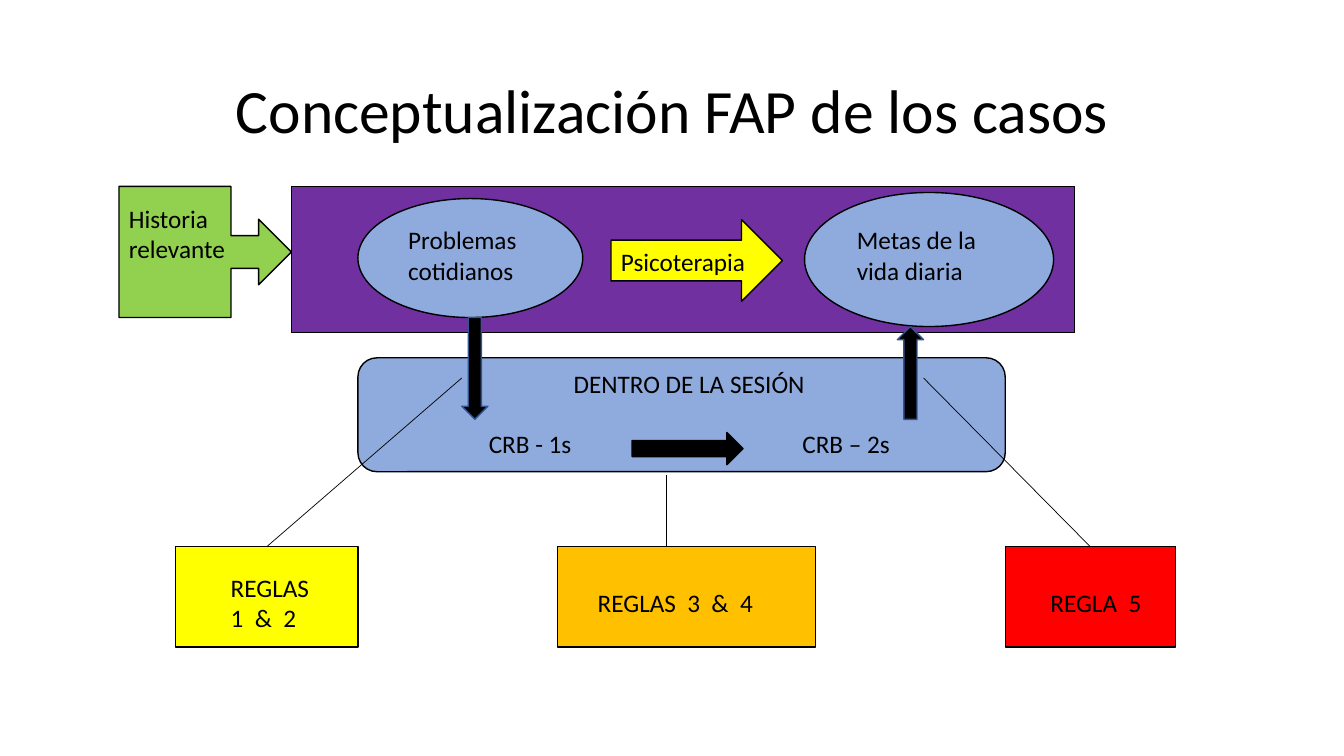
from dataclasses import dataclass
from pptx import Presentation
from pptx import util as u
from pptx.dml.color import RGBColor
from pptx.enum import shapes, text
from pptx.oxml.ns import qn
from lxml import etree

KIND = shapes.MSO_SHAPE
ALIGN = text.PP_ALIGN


@dataclass(frozen=True)
class Theme:
    font: str = "Calibri"
    head: int = 44
    body: int = 18
    edge: float = 1
    hair: float = 0.5
    black: str = "000000"
    navy: str = "325491"
    blue: str = "8FAADC"
    purple: str = "7030A0"
    green: str = "92D050"
    yellow: str = "FFFF00"
    orange: str = "FFC000"
    red: str = "FF0000"


THEME = Theme()


def color(code):
    return RGBColor.from_string(code)


def place(box, x, y, w, h):
    return [u.Inches(v) for v in (box[0] + x, box[1] + y, w, h)]


def style(frame, size, align):
    for para in frame.paragraphs:
        para.alignment = align
        for run in para.runs:
            run.font.name = THEME.font
            run.font.size = u.Pt(size)
            run.font.color.rgb = color(THEME.black)


def draw(slide, kind, box, spot, fill, line=THEME.black):
    shape = slide.shapes.add_shape(kind, *place(box, *spot))
    shape.shadow.inherit = False
    shape.fill.solid()
    shape.fill.fore_color.rgb = color(fill)
    shape.line.color.rgb = color(line)
    shape.line.width = u.Pt(THEME.edge)
    return shape


def label(slide, words, box, spot, align=ALIGN.LEFT):
    frame = slide.shapes.add_textbox(*place(box, *spot)).text_frame
    frame.word_wrap = True
    frame.text = words
    style(frame, THEME.body, align)


def link(slide, start, end):
    line = slide.shapes.add_connector(
        shapes.MSO_CONNECTOR.STRAIGHT, *[u.Inches(v) for v in start + end])
    line.line.color.rgb = color(THEME.black)
    line.line.width = u.Pt(THEME.hair)
    etree.SubElement(line._element.spPr, qn("a:effectLst"))


def title(slide, box):
    head = slide.shapes.title
    head.left, head.top, head.width, head.height = place((0, 0), *box)
    frame = head.text_frame
    frame.text = "Conceptualización FAP de los casos"
    frame.vertical_anchor = text.MSO_ANCHOR.MIDDLE
    frame.paragraphs[0].line_spacing = 0.9
    style(frame, THEME.head, ALIGN.CENTER)


def history(slide, box):
    draw(slide, KIND.RIGHT_ARROW_CALLOUT, box, (0, 0, *box[2:]), THEME.green)
    label(slide, "Historia\nrelevante", box, (0, 0.12, 1.34, 0.71))


def daily(slide, box):
    draw(slide, KIND.FLOWCHART_PROCESS, box, (0, 0, *box[2:]), THEME.purple)
    for kind, spot, fill, words, area in (
        (KIND.OVAL, (0.66, 0.12, 2.23, 1.18), THEME.blue,
         "Problemas\ncotidianos", (1.06, 0.33, 1.45, 0.71)),
        (KIND.OVAL, (5.09, 0.06, 2.47, 1.33), THEME.blue,
         "Metas de la vida diaria", (5.51, 0.33, 1.69, 0.71)),
        (KIND.RIGHT_ARROW, (3.17, 0.33, 1.7, 0.81), THEME.yellow,
         "Psicoterapia", (3.17, 0.54, 1.54, 0.4)),
    ):
        draw(slide, kind, box, spot, fill)
        label(slide, words, box, area)


def session(slide, box):
    draw(slide, KIND.ROUNDED_RECTANGLE, box, (0, 0, *box[2:]), THEME.blue)
    label(slide, "DENTRO DE LA SESIÓN", box, (0.64, 0.05, 5.29, 0.4),
          ALIGN.CENTER)
    for words, x in (("CRB - 1s", 1.2), ("CRB – 2s", 4.31)):
        label(slide, words, box, (x, 0.65, 1.2, 0.4))
    draw(slide, KIND.RIGHT_ARROW, box, (2.72, 0.74, 1.1, 0.32), THEME.black)
    for x, y, turn in ((1.03, -0.4, 0), (5.35, -0.31, 180)):
        arrow = draw(slide, KIND.DOWN_ARROW, box, (x, y, 0.26, 0.61 - y),
                     THEME.black, THEME.navy)
        arrow.rotation = turn


def rules(slide, box):
    for x, w, fill, words, area, start, foot in (
        (0, 1.81, THEME.yellow, "REGLAS\n1  &  2",
         (0.45, 0.21, 1.39, 0.71), (2.84, -1.67), 0.91),
        (3.79, 2.56, THEME.orange, "REGLAS  3  &  4",
         (4.09, 0.36, 2.2, 0.4), (4.87, -0.71), 4.87),
        (8.23, 1.69, THEME.red, "REGLA  5",
         (8.58, 0.36, 1.27, 0.4), (7.42, -1.67), 9.07),
    ):
        draw(slide, KIND.FLOWCHART_PROCESS, box, (x, 0, w, box[3]), fill)
        label(slide, words, box, area)
        link(slide, (box[0] + start[0], box[1] + start[1]),
             (box[0] + foot, box[1]))


def main():
    deck = Presentation()
    deck.slide_width = u.Inches(13.33)
    deck.slide_height = u.Inches(7.5)
    slide = deck.slides.add_slide(deck.slide_layouts[5])
    title(slide, (0.92, 0.4, 11.5, 1.45))
    daily(slide, (2.89, 1.85, 7.77, 1.45))
    history(slide, (1.18, 1.85, 1.71, 1.3))
    session(slide, (3.55, 3.55, 6.42, 1.13))
    rules(slide, (1.74, 5.42, 9.92, 1))
    deck.save("out.pptx")


if __name__ == "__main__":
    main()
